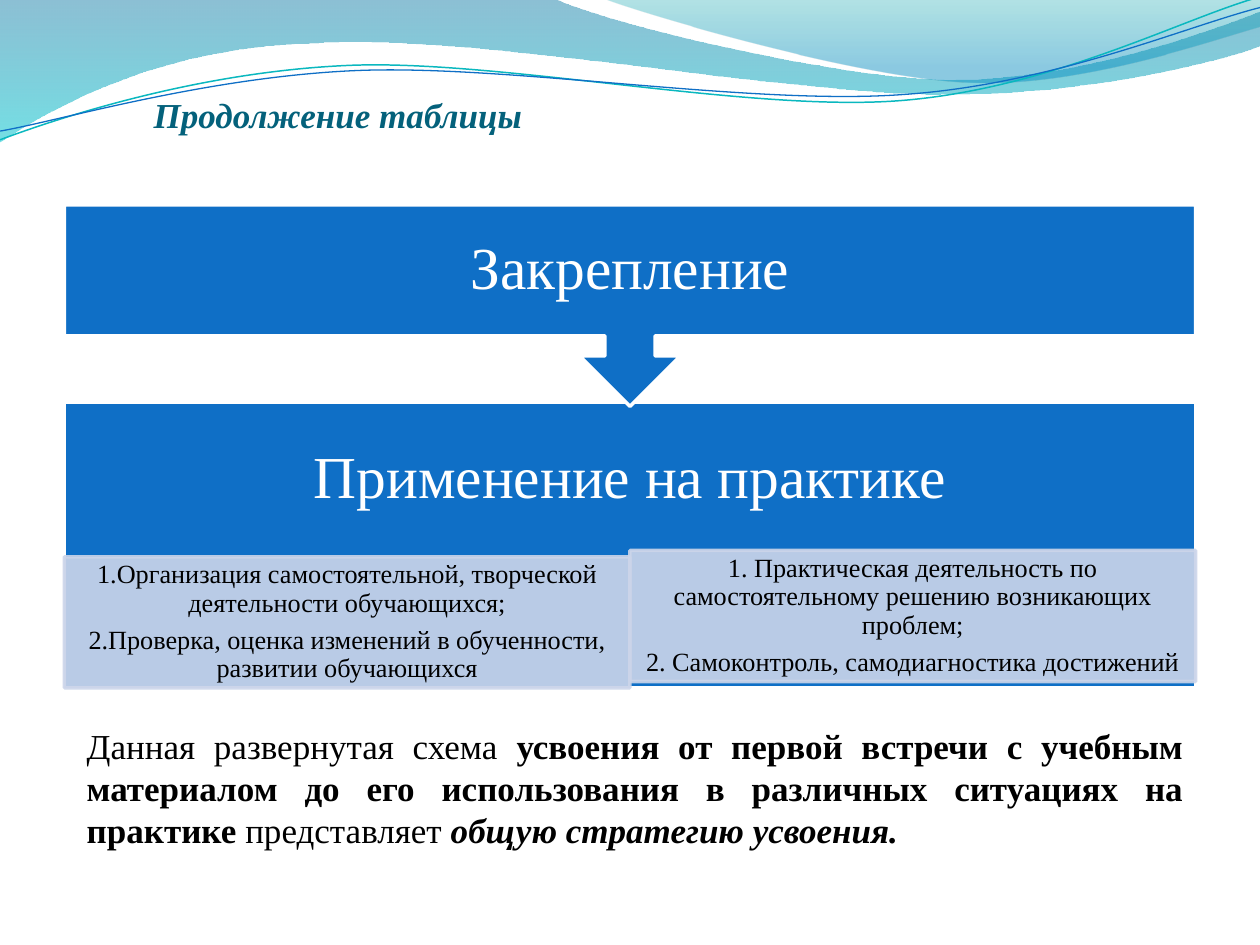
from lxml import etree
from pptx import Presentation
from pptx.dml.color import RGBColor
from pptx.enum.shapes import MSO_SHAPE
from pptx.enum.text import MSO_ANCHOR, PP_ALIGN
from pptx.oxml.ns import qn
from pptx.util import Pt

RECTANGLE = MSO_SHAPE.RECTANGLE
CALLOUT = MSO_SHAPE.UP_ARROW_CALLOUT
TOP, MIDDLE, BOTTOM = MSO_ANCHOR.TOP, MSO_ANCHOR.MIDDLE, MSO_ANCHOR.BOTTOM
LEFT, CENTER, JUSTIFY = PP_ALIGN.LEFT, PP_ALIGN.CENTER, PP_ALIGN.JUSTIFY

FONT = "Times New Roman"
BLUE, PALE, WHITE, BLACK, TITLE_COLOR = "0F6FC6", "CCD5EA", "FFFFFF", "000000", "04617B"
DIAGRAM_LEFT, DIAGRAM_WIDTH = 36.8, 646.4

LEFT_WAVE = [(-0.7, 0), (316.8, -0.7), (342.7, 12.2, 478.1, 45.4, 545.8, 45.4),
             (614.2, 45.4, 689.8, 18.7, 720, 6.5), (720.7, 25.9),
             (707.8, 31.7, 626.4, 54.7, 537.1, 54), (447.8, 54, 275, 20.2, 185, 24.5),
             (92.9, 25.9, 33.1, 59.8, -0.7, 81.4)]
RIGHT_WAVE = [(344.9, -0.7), (366.5, 7.9, 491, 44.6, 553.7, 46.8),
              (616.3, 49.7, 691.9, 23, 720, 15.1), (720, 0)]
TEAL_LINE = [(0, 79.9), (34.6, 67, 113.8, 41, 199.4, 37.4),
             (284.4, 33.8, 427, 64.1, 513.4, 57.6), (599.8, 51.1, 675.4, 10.8, 718.6, -1.4)]
BLUE_LINE = [(0, 74.9), (33.8, 69.1, 118.1, 43.9, 203.8, 40.3),
             (290.2, 36.7, 429.8, 60.5, 516.2, 54), (601.9, 48.2, 677.5, 15.1, 720, 4.3)]


def color(value):
    """Turn a hex string into a colour."""
    return RGBColor.from_string(value)


def set_alpha(element, percent):
    """Make every colour inside an element partly opaque."""
    for node in element.iter(qn("a:srgbClr")):
        etree.SubElement(node, qn("a:alpha")).set("val", str(percent * 1000))


def add_outline(slide, outline, close):
    """Draw a freeform whose six-number segments are Bezier curves."""
    anchors = [(Pt(segment[-2]), Pt(segment[-1])) for segment in outline]
    builder = slide.shapes.build_freeform(*anchors[0])
    builder.add_line_segments(anchors[1:], close=close)
    shape = builder.convert_to_shape()
    shape.shadow.inherit = False
    nodes = list(shape.element.iter(qn("a:lnTo")))
    for node, segment in zip(nodes, outline[1:]):
        if len(segment) == 6:
            node.tag = qn("a:cubicBezTo")
            for index in (0, 1):
                point = etree.Element(qn("a:pt"))
                point.set("x", str(Pt(segment[2 * index]) - shape.left))
                point.set("y", str(Pt(segment[2 * index + 1]) - shape.top))
                node.insert(index, point)
    return shape


def add_wave(slide, outline, stops):
    """Add a wave with a translucent downward gradient."""
    shape = add_outline(slide, outline, True)
    shape.line.fill.background()
    shape.fill.gradient()
    shape.fill.gradient_angle = 270
    for stop, (position, value, alpha) in zip(shape.fill.gradient_stops, stops):
        stop.position = position
        stop.color.rgb = color(value)
    for node, (position, value, alpha) in zip(shape.element.iter(qn("a:gs")), stops):
        set_alpha(node, alpha)


def add_wave_line(slide, outline, value, width):
    """Add a thin curved line."""
    shape = add_outline(slide, outline, False)
    shape.fill.background()
    shape.line.color.rgb = color(value)
    shape.line.width = Pt(width)


def add_block(slide, kind, box, fill, line):
    """Add a filled preset shape with a 2 pt border."""
    shape = slide.shapes.add_shape(kind, *map(Pt, box))
    shape.shadow.inherit = False
    shape.fill.solid()
    shape.fill.fore_color.rgb = color(fill)
    shape.line.color.rgb = color(line)
    shape.line.width = Pt(2)
    return shape


def set_frame(shape, insets, anchor):
    """Set wrapping, margins and anchor, and return the text frame."""
    frame = shape.text_frame
    frame.word_wrap = True
    frame.margin_left, frame.margin_top, frame.margin_right, frame.margin_bottom = map(Pt, insets)
    frame.vertical_anchor = anchor
    return frame


def add_run(paragraph, text, size, value, bold=False, italic=False):
    """Add one formatted run."""
    run = paragraph.add_run()
    run.text = text
    font = run.font
    font.name, font.size, font.bold, font.italic = FONT, Pt(size), bold, italic
    font.color.rgb = color(value)


def write_centered(shape, texts, size, value, insets):
    """Write centred paragraphs in the middle of a shape."""
    frame = set_frame(shape, insets, MIDDLE)
    for index, text in enumerate(texts):
        paragraph = frame.add_paragraph() if index else frame.paragraphs[0]
        paragraph.alignment = CENTER
        paragraph.line_spacing = 0.9
        paragraph.space_before = Pt(5.25 if index else 0)
        add_run(paragraph, text, size, value)


def add_detail(slide, left, top, texts):
    """Add a pale box with numbered statements."""
    shape = add_block(slide, RECTANGLE, (left, top, DIAGRAM_WIDTH / 2, 74.9), PALE, PALE)
    set_alpha(shape.element, 90)
    write_centered(shape, texts, 15, BLACK, (8.6, 1.4, 8.6, 1.4))


def add_title(slide, text):
    """Fill the title placeholder."""
    title = slide.shapes.title
    title.left, title.top, title.width, title.height = map(Pt, (87.8, 38, 553, 39.6))
    paragraph = set_frame(title, (0, 3.6, 0, 0), BOTTOM).paragraphs[0]
    paragraph.alignment = LEFT
    add_run(paragraph, text, 20, TITLE_COLOR, True, True)


def add_diagram(slide):
    """Add the two stages and the details of the second."""
    practice = add_block(slide, RECTANGLE, (DIAGRAM_LEFT, 229.7, DIAGRAM_WIDTH, 163.4), BLUE, WHITE)
    write_centered(practice, ["Применение на практике"], 34, WHITE, (18.7, 18.7, 18.7, 93.2))
    add_detail(slide, DIAGRAM_LEFT, 318.2, [
        "1.Организация самостоятельной, творческой деятельности обучающихся;",
        "2.Проверка, оценка изменений в обученности, развитии обучающихся"])
    add_detail(slide, DIAGRAM_LEFT + DIAGRAM_WIDTH / 2, 314.6, [
        "1. Практическая деятельность по самостоятельному решению возникающих проблем;",
        "2. Самоконтроль, самодиагностика достижений"])
    callout = add_block(slide, CALLOUT, (DIAGRAM_LEFT, 117, DIAGRAM_WIDTH, 115.2), BLUE, WHITE)
    callout.rotation = 180
    label = slide.shapes.add_textbox(*map(Pt, (DIAGRAM_LEFT, 117, DIAGRAM_WIDTH, 74.9)))
    write_centered(label, ["Закрепление"], 34, WHITE, (18.7,) * 4)


def add_conclusion(slide):
    """Add the justified closing paragraph."""
    box = slide.shapes.add_textbox(*map(Pt, (42.5, 388.8, 640.8, 101.5)))
    paragraph = set_frame(box, (7.2, 25.1, 7.2, 3.6), TOP).paragraphs[0]
    paragraph.alignment = JUSTIFY
    paragraph.line_spacing = Pt(24)
    for text, bold, italic in (
            ("Данная развернутая схема ", False, False),
            ("усвоения от первой встречи с учебным материалом до его использования "
             "в различных ситуациях на практике ", True, False),
            ("представляет", False, False),
            (" общую стратегию усвоения.", True, True)):
        add_run(paragraph, text, 20, BLACK, bold, italic)


def main():
    """Build the slide and save it."""
    presentation = Presentation()
    presentation.slide_width, presentation.slide_height = Pt(720), Pt(540)
    slide = presentation.slides.add_slide(presentation.slide_layouts[5])
    add_wave(slide, LEFT_WAVE, [(0, "0074A1", 45), (1, "00C6CF", 55)])
    add_wave(slide, RIGHT_WAVE, [(0, "00A1A9", 30), (0.8, "008BBF", 45)])
    add_wave_line(slide, TEAL_LINE, "0AB8BF", 0.85)
    add_wave_line(slide, BLUE_LINE, BLUE, 0.75)
    add_title(slide, "Продолжение таблицы")
    add_diagram(slide)
    add_conclusion(slide)
    presentation.save("out.pptx")


if __name__ == "__main__":
    main()
